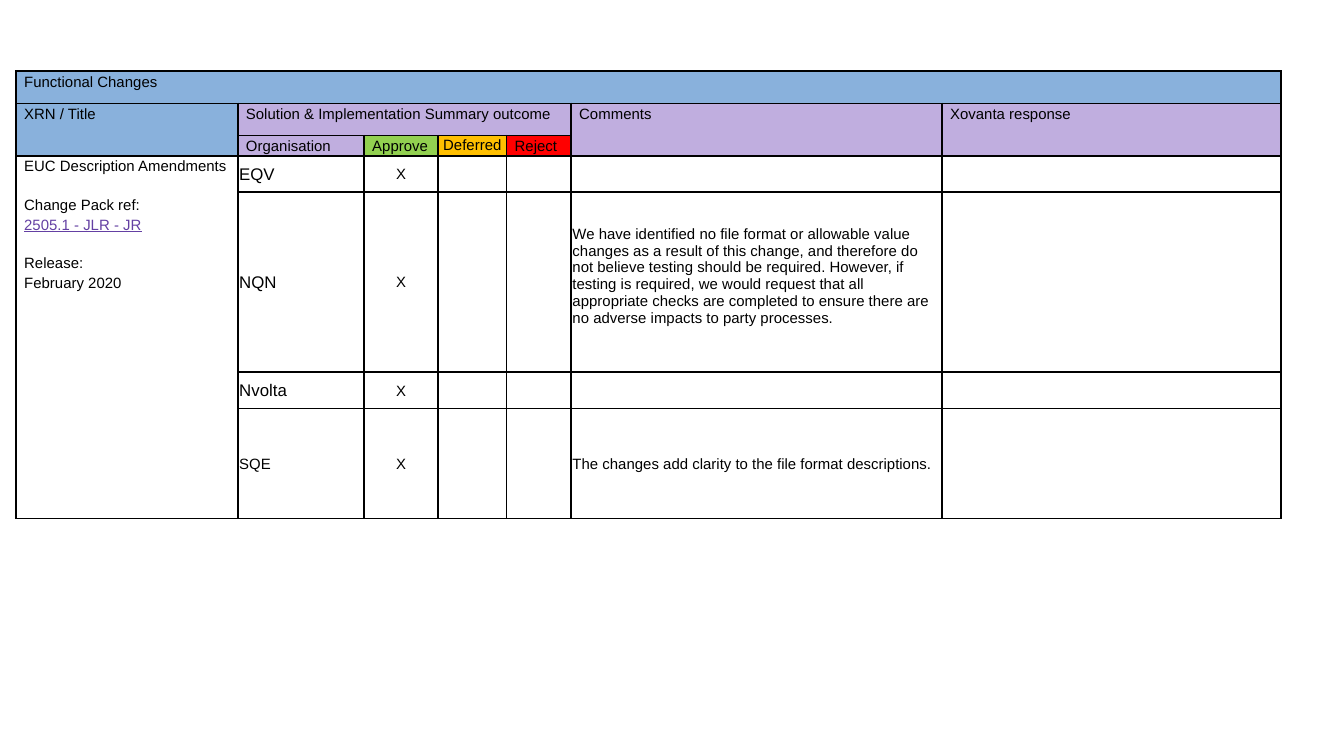
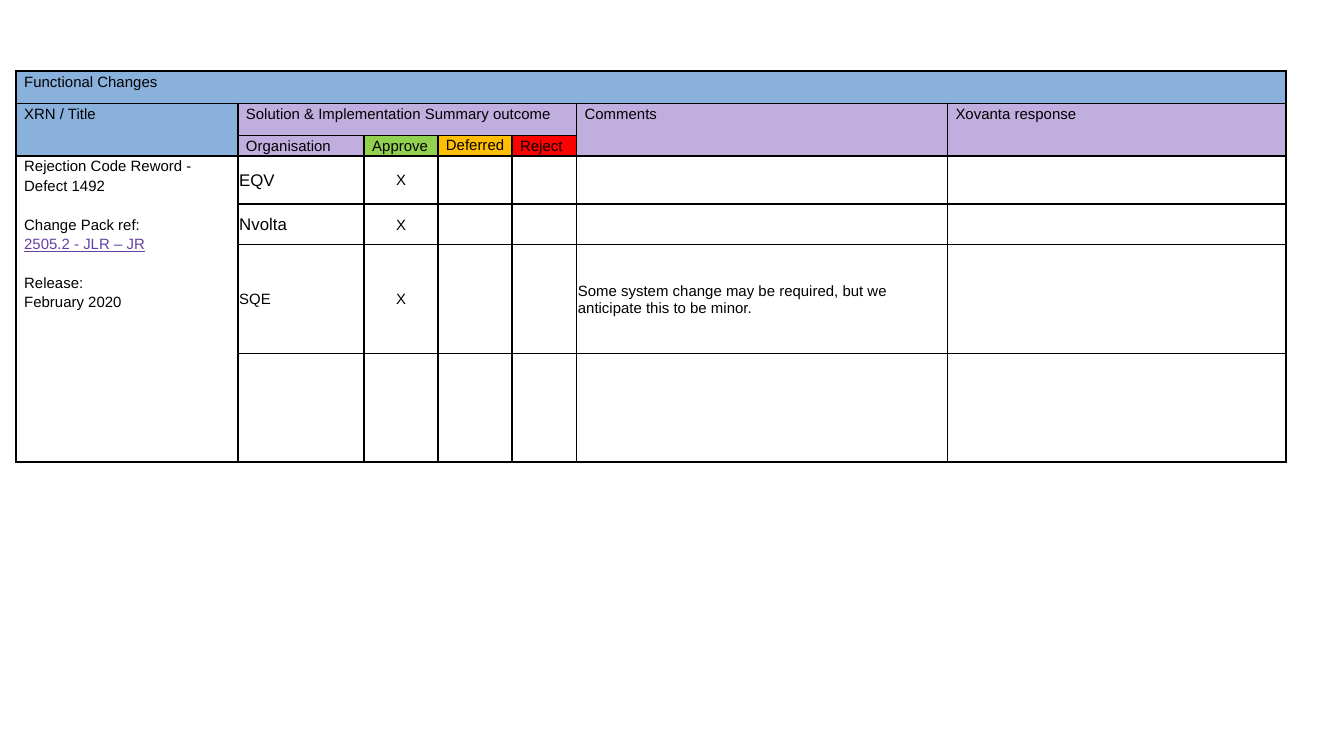
from lxml import etree
from pptx import Presentation
from pptx.dml.color import RGBColor
from pptx.enum.text import MSO_ANCHOR, PP_ALIGN
from pptx.oxml import parse_xml
from pptx.oxml.ns import nsdecls, qn
from pptx.util import Inches, Pt

MIDDLE, CENTER = MSO_ANCHOR.MIDDLE, PP_ALIGN.CENTER
BLACK = RGBColor(0x00, 0x00, 0x00)
BLUE = RGBColor(0x89, 0xB1, 0xDC)
LILAC = RGBColor(0xC0, 0xAE, 0xDF)
GREEN = RGBColor(0x92, 0xD0, 0x50)
AMBER = RGBColor(0xFF, 0xBF, 0x00)
RED = RGBColor(0xFF, 0x00, 0x00)
LINK = RGBColor(0x64, 0x40, 0xA3)
FONT = "Arial"
WIDE, TIGHT = 0.06, 0.01

# Header cells: row, column, last row, last column, text, fill
HEADS = [
    (0, 0, 0, 6, "Functional Changes", BLUE),
    (1, 0, 2, 0, "XRN / Title", BLUE),
    (1, 1, 1, 4, "Solution & Implementation Summary outcome", LILAC),
    (1, 5, 2, 5, "Comments", LILAC),
    (1, 6, 2, 6, "Xovanta response", LILAC),
    (2, 1, 2, 1, "Organisation", LILAC),
    (2, 2, 2, 2, "Approve", GREEN),
    (2, 3, 2, 3, "Deferred", AMBER),
    (2, 4, 2, 4, "Reject", RED),
]

# Each slide: title, reference, deferred column width, row heights,
# and votes as organisation, text size, comment
PAGES = [
    ("EUC Description Amendments", "2505.1 - JLR - JR", 0.51,
     [0.24, 0.24, 0.15, 0.27, 1.34, 0.27, 0.82],
     [("EQV", 9, ""),
      ("NQN", 9, "We have identified no file format or allowable value "
       "changes as a result of this change, and therefore do not believe "
       "testing should be required. However, if testing is required, we "
       "would request that all appropriate checks are completed to ensure "
       "there are no adverse impacts to party processes."),
      ("Nvolta", 9, ""),
      ("SQE", 8, "The changes add clarity to the file format descriptions.")]),
    ("Rejection Code Reword - Defect 1492", "2505.2 - JLR – JR", 0.55,
     [0.24, 0.24, 0.15, 0.36, 0.3, 0.81, 0.81],
     [("EQV", 9, ""),
      ("Nvolta", 9, ""),
      ("SQE", 8, "Some system change may be required, but we anticipate "
       "this to be minor.")]),
]


def dress(cell):
    """Give a cell tight margins, black borders, no fill and small text."""
    cell.margin_left = cell.margin_right = cell.margin_top = Inches(TIGHT)
    cell.margin_bottom = 0
    props = cell._tc.get_or_add_tcPr()
    for side in ("lnL", "lnR", "lnT", "lnB"):
        props.append(parse_xml(
            f'<a:{side} {nsdecls("a")} w="12700"><a:solidFill>'
            f'<a:srgbClr val="{BLACK}"/></a:solidFill></a:{side}>'))
    cell.fill.background()
    end = etree.SubElement(cell.text_frame.paragraphs[0]._p, qn("a:endParaRPr"))
    end.set("sz", "800")


def write(cell, lines, size=8, align=None, wide=False):
    """Write one paragraph per line; wide cells get looser spacing."""
    if wide:
        cell.margin_left = cell.margin_right = Inches(WIDE)
        cell.margin_top = 0
    cell.text = "\n".join(lines)
    for para in cell.text_frame.paragraphs:
        para.alignment = align
        if wide:
            para.line_spacing = 1.15
        para.font.name = FONT
        para.font.size = Pt(size)
        para.font.color.rgb = BLACK


# Widescreen, 16 to 9
deck = Presentation()
deck.slide_width = Inches(10)
deck.slide_height = Inches(10) * 9 // 16

for title, ref, defer, highs, votes in PAGES:
    slide = deck.slides.add_slide(deck.slide_layouts[6])
    cols = [1.65, 0.94, 0.55, defer, 0.48, 2.76, 2.52]
    table = slide.shapes.add_table(
        len(highs), len(cols), Inches(0.12), Inches(0.53),
        Inches(sum(cols)), Inches(sum(highs))).table
    table.first_row = table.horz_banding = False
    for col, width in zip(table.columns, cols):
        col.width = Inches(width)
    for row, high in zip(table.rows, highs):
        row.height = Inches(high)
    for cell in table.iter_cells():
        dress(cell)

    # Header rows
    for top, left, low, right, text, fill in HEADS:
        cell = table.cell(top, left)
        if (top, left) != (low, right):
            cell.merge(table.cell(low, right))
        defers = fill == AMBER
        write(cell, [text], align=CENTER if defers else None, wide=not defers)
        cell.fill.solid()
        cell.fill.fore_color.rgb = fill

    # Change details
    cell = table.cell(3, 0)
    cell.merge(table.cell(6, 0))
    write(cell, [title, "Change Pack ref:", ref, "Release:", "February 2020"],
          wide=True)
    paras = cell.text_frame.paragraphs
    paras[1].space_before = paras[3].space_before = Pt(10.4)
    paras[2].font.color.rgb = LINK
    paras[2].font.underline = True

    # Votes and comments
    for row, (name, size, note) in enumerate(votes, 3):
        write(table.cell(row, 1), [name], size)
        write(table.cell(row, 2), ["X"], align=CENTER)
        if note:
            write(table.cell(row, 5), [note])
        for col in (1, 2, 5):
            table.cell(row, col).vertical_anchor = MIDDLE
        if len(note) > 100:
            table.cell(row, 5).margin_bottom = Inches(0.1)

deck.save("out.pptx")
